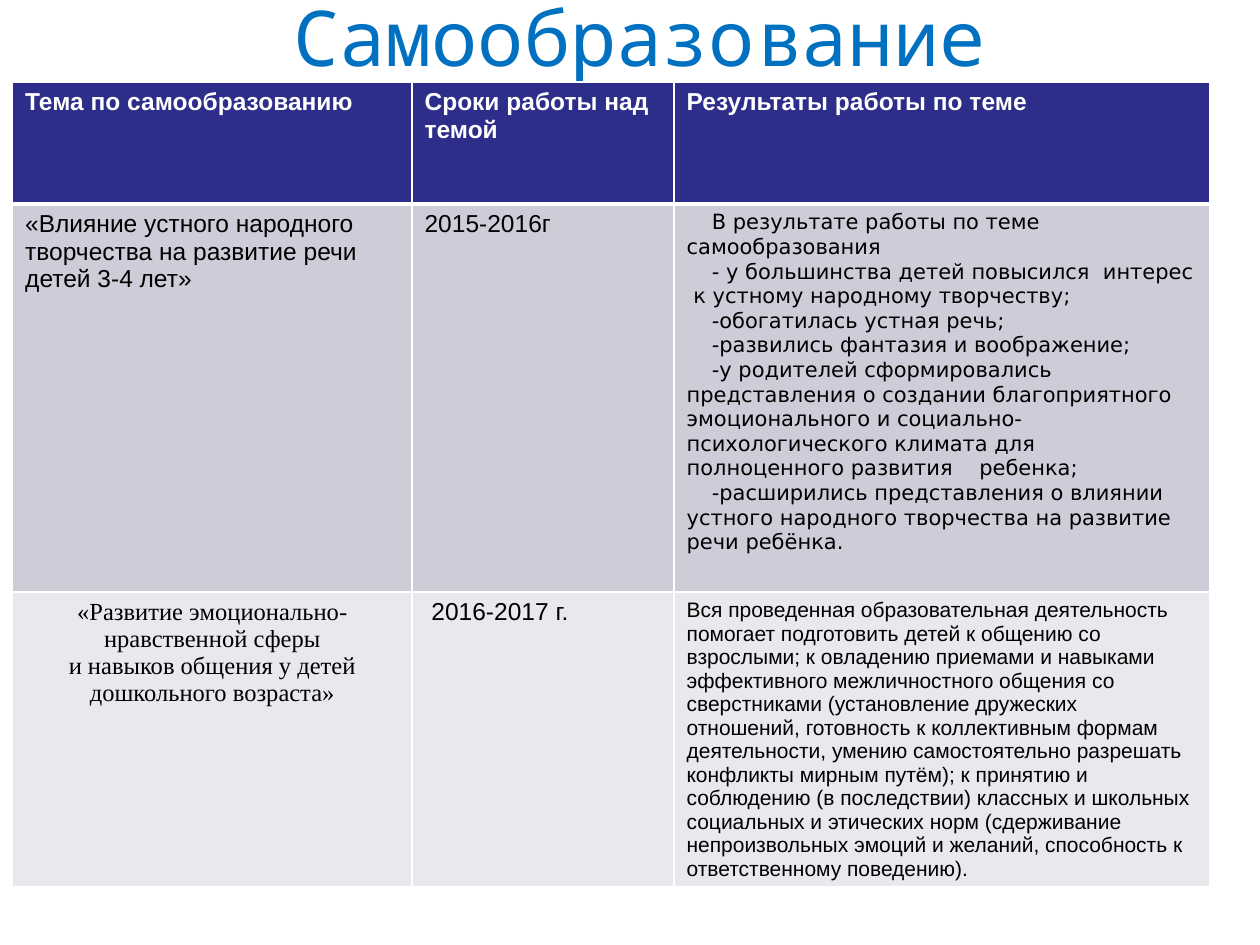
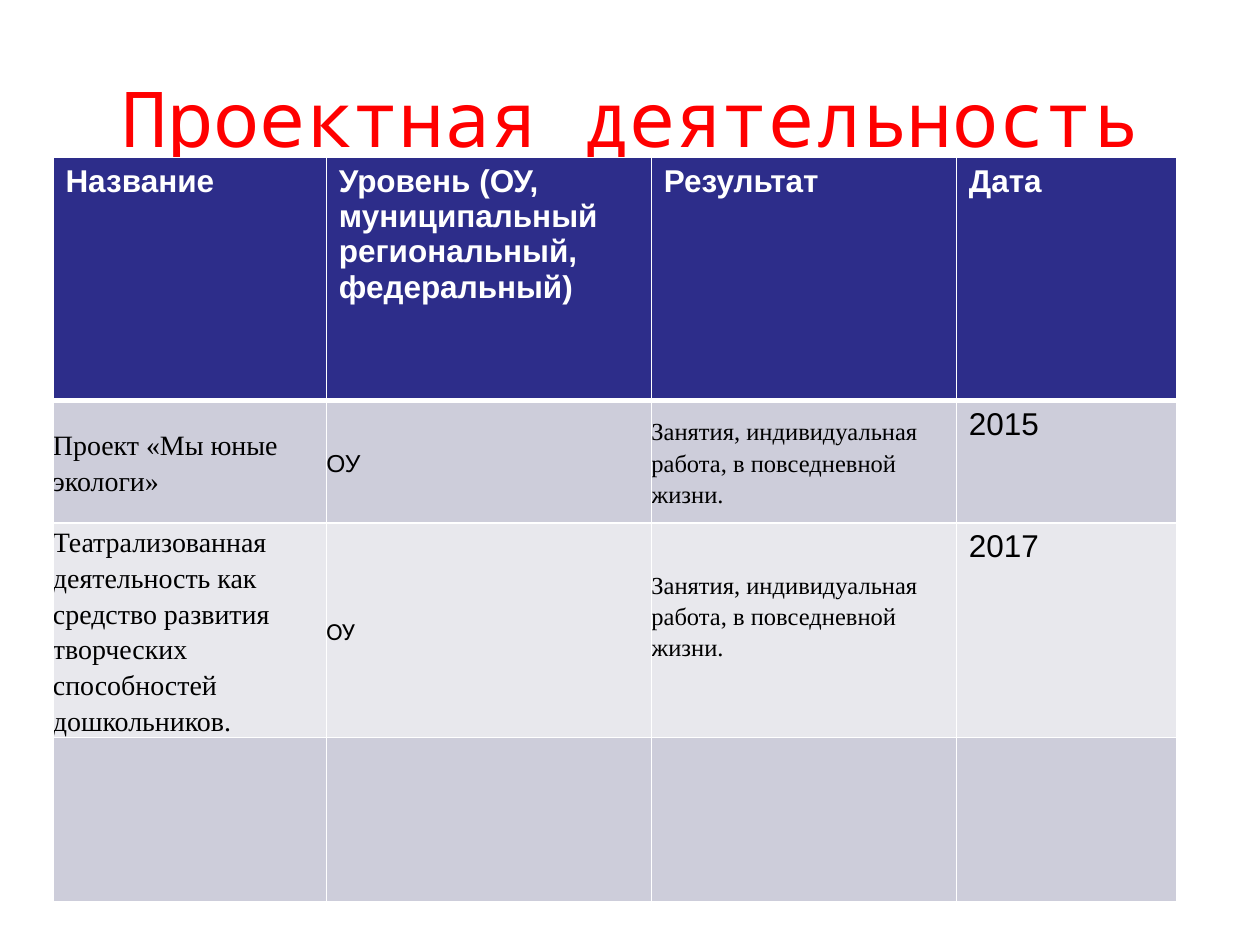
from dataclasses import dataclass, replace

import lxml.etree
import pptx
import pptx.dml.color
import pptx.enum.text
import pptx.oxml.ns
import pptx.slide
import pptx.table
import pptx.text.text
import pptx.util

Inches = pptx.util.Inches
ALIGN = pptx.enum.text.PP_ALIGN
ANCHOR = pptx.enum.text.MSO_ANCHOR

COLORS = {
    "white": "FFFFFF",
    "black": "000000",
    "header": "2D2D8A",
    "band_dark": "CDCDDA",
    "band_light": "E8E8ED",
    "blue": "0070C0",
    "red": "FF0000",
}
SERIF = "Times New Roman"


@dataclass(frozen=True)
class Cell:
    text: str = ""
    size: int = 14
    font: str = "Arial"
    align: ALIGN = ALIGN.LEFT
    indent: float = 0
    flush: bool = False  # no insets, centred vertically, looser lines
    bottom: float = 0  # bottom inset of a flush cell


@dataclass(frozen=True)
class Title:
    text: str
    color: str
    left: float
    top: float
    bottom_inset: float = 0.05


@dataclass(frozen=True)
class Grid:
    left: float
    top: float
    cols: list[float]
    rows: list[float]
    header_size: int
    header: list[str]
    body: list[list[Cell]]


def rgb(name: str) -> pptx.dml.color.RGBColor:
    return pptx.dml.color.RGBColor.from_string(COLORS[name])


def style_font(p: pptx.text.text._Paragraph, name: str, size: int,
               color: str, bold: bool = False) -> None:
    for r in p.runs:
        r.font.name = name
        r.font.size = pptx.util.Pt(size)
        r.font.bold = bold
        r.font.color.rgb = rgb(color)


def add_title(s: pptx.slide.Slide, title: Title) -> None:
    sp = s.shapes.title
    sp.left, sp.top = Inches(title.left), Inches(title.top)
    sp.width, sp.height = Inches(9), Inches(1.25)
    tf = sp.text_frame
    tf.text = title.text
    tf.word_wrap = True
    tf.auto_size = pptx.enum.text.MSO_AUTO_SIZE.NONE
    tf.vertical_anchor = ANCHOR.MIDDLE
    tf.margin_bottom = Inches(title.bottom_inset)
    p = tf.paragraphs[0]
    p.alignment = ALIGN.CENTER
    style_font(p, "Noto Sans Mono", 44, title.color)


def add_borders(cell: pptx.table._Cell, top: int, bottom: int) -> None:
    """White cell borders; top and bottom are widths in points."""
    qn = pptx.oxml.ns.qn
    tc_pr = cell._tc.get_or_add_tcPr()
    for side, width in (("L", 1), ("R", 1), ("T", top), ("B", bottom)):
        ln = lxml.etree.SubElement(tc_pr, qn(f"a:ln{side}"), w=str(pptx.util.Pt(width)))
        fill = lxml.etree.SubElement(ln, qn("a:solidFill"))
        lxml.etree.SubElement(fill, qn("a:srgbClr"), val=COLORS["white"])


def fill_cell(cell: pptx.table._Cell, content: Cell, row: int) -> None:
    is_header = row == 0
    add_borders(cell, top=3 if row == 1 else 1, bottom=3 if is_header else 1)
    band = "header" if is_header else "band_dark" if row % 2 else "band_light"
    cell.fill.solid()
    cell.fill.fore_color.rgb = rgb(band)
    if content.flush:
        cell.margin_left = cell.margin_right = cell.margin_top = 0
        cell.margin_bottom = Inches(content.bottom)
        cell.vertical_anchor = ANCHOR.MIDDLE
    cell.text_frame.text = content.text
    for p in cell.text_frame.paragraphs:
        p.alignment = content.align
        if content.indent:
            p_pr = p._p.get_or_add_pPr()
            p_pr.set("marL", "0")
            p_pr.set("indent", str(Inches(content.indent)))
        if content.flush:
            p.line_spacing = 1.15
        style_font(p, content.font, content.size,
                   "white" if is_header else "black", is_header)


def add_grid(s: pptx.slide.Slide, grid: Grid) -> None:
    table = s.shapes.add_table(
        len(grid.rows), len(grid.cols), Inches(grid.left), Inches(grid.top),
        Inches(sum(grid.cols)), Inches(sum(grid.rows))).table
    for column, width in zip(table.columns, grid.cols):
        column.width = Inches(width)
    for row, height in zip(table.rows, grid.rows):
        row.height = Inches(height)
    header = [Cell(text, grid.header_size) for text in grid.header]
    for i, contents in enumerate([header, *grid.body]):
        for j, content in enumerate(contents):
            fill_cell(table.cell(i, j), content, i)


RESULTS = "\n".join([
    "В результате работы по теме самообразования",
    "- у большинства детей повысился  интерес  к устному народному творчеству;",
    "-обогатилась устная речь;",
    "-развились фантазия и воображение;",
    "-у родителей сформировались представления о создании благоприятного "
    "эмоционального и социально-психологического климата для полноценного "
    "развития    ребенка;",
    "-расширились представления о влиянии устного народного творчества на "
    "развитие речи ребёнка.",
])
OUTCOME = (
    "Вся проведенная образовательная деятельность помогает подготовить детей к "
    "общению со взрослыми; к овладению приемами и навыками эффективного "
    "межличностного общения со сверстниками (установление дружеских отношений, "
    "готовность к коллективным формам деятельности, умению самостоятельно "
    "разрешать конфликты мирным путём); к принятию и соблюдению (в последствии) "
    "классных и школьных социальных и этических норм (сдерживание непроизвольных "
    "эмоций и желаний, способность к ответственному поведению)."
)
SELF_EDUCATION = Grid(
    0.1, 0.65, [3.17, 2.08, 4.25], [0.97, 3.08, 2.33], 14,
    ["Тема по самообразованию", "Сроки работы над темой", "Результаты работы по теме"],
    [
        [Cell("«Влияние устного народного творчества на развитие речи детей 3-4 лет»"),
         Cell("2015-2016г"),
         Cell(RESULTS, 12, "DejaVu Sans", indent=0.2)],
        [Cell("«Развитие эмоционально-нравственной сферы\n"
              "и навыков общения у детей дошкольного возраста»",
              font=SERIF, align=ALIGN.CENTER),
         Cell(" 2016-2017 г."),
         Cell(OUTCOME, 12)],
    ],
)

ACTIVITIES = Cell("Занятия, индивидуальная работа, в повседневной жизни.",
                  font=SERIF, flush=True)
PROJECTS = Grid(
    0.42, 1.25, [2.17, 2.58, 2.42, 1.75], [1.93, 0.97, 1.7, 1.3], 18,
    ["Название", "Уровень (ОУ, муниципальный региональный, федеральный)",
     "Результат", "Дата"],
    [
        [Cell("Проект «Мы юные экологи»", 16, SERIF, flush=True),
         Cell("ОУ", flush=True),
         ACTIVITIES,
         Cell("2015", 18)],
        [Cell("Театрализованная деятельность как средство развития творческих "
              "способностей дошкольников.", 16, SERIF, flush=True),
         Cell("ОУ", font="Calibri", flush=True),
         replace(ACTIVITIES, bottom=0.24),
         Cell("2017", 18)],
        [Cell()] * 4,
    ],
)

SLIDES = [
    (Title("Самообразование", "blue", 0.58, 0.03, bottom_inset=0.8), SELF_EDUCATION),
    (Title("Проектная деятельность", "red", 0.5, 0.3), PROJECTS),
]


def main() -> None:
    prs = pptx.Presentation()
    prs.slide_width, prs.slide_height = Inches(10), Inches(7.5)
    title_only = prs.slide_layouts.get_by_name("Title Only")
    for title, grid in SLIDES:
        s = prs.slides.add_slide(title_only)
        add_title(s, title)
        add_grid(s, grid)
    prs.save("out.pptx")


if __name__ == "__main__":
    main()
